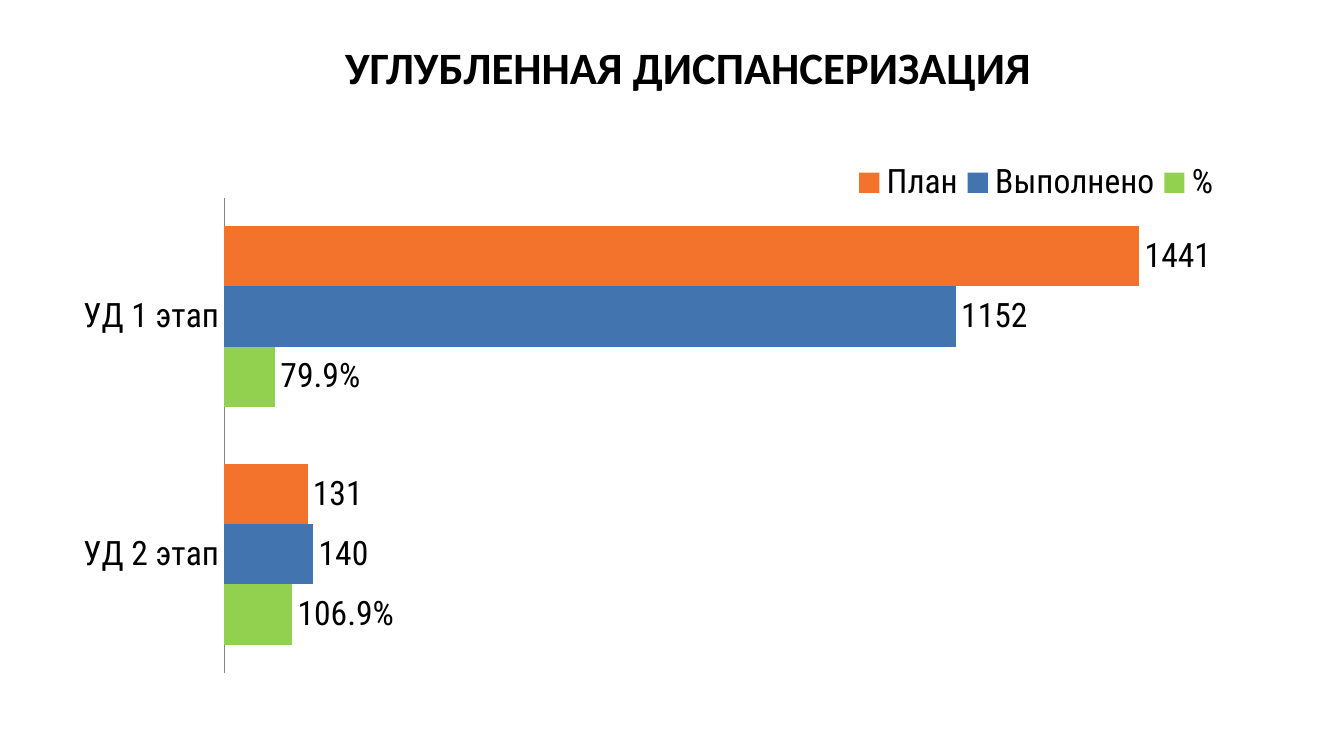
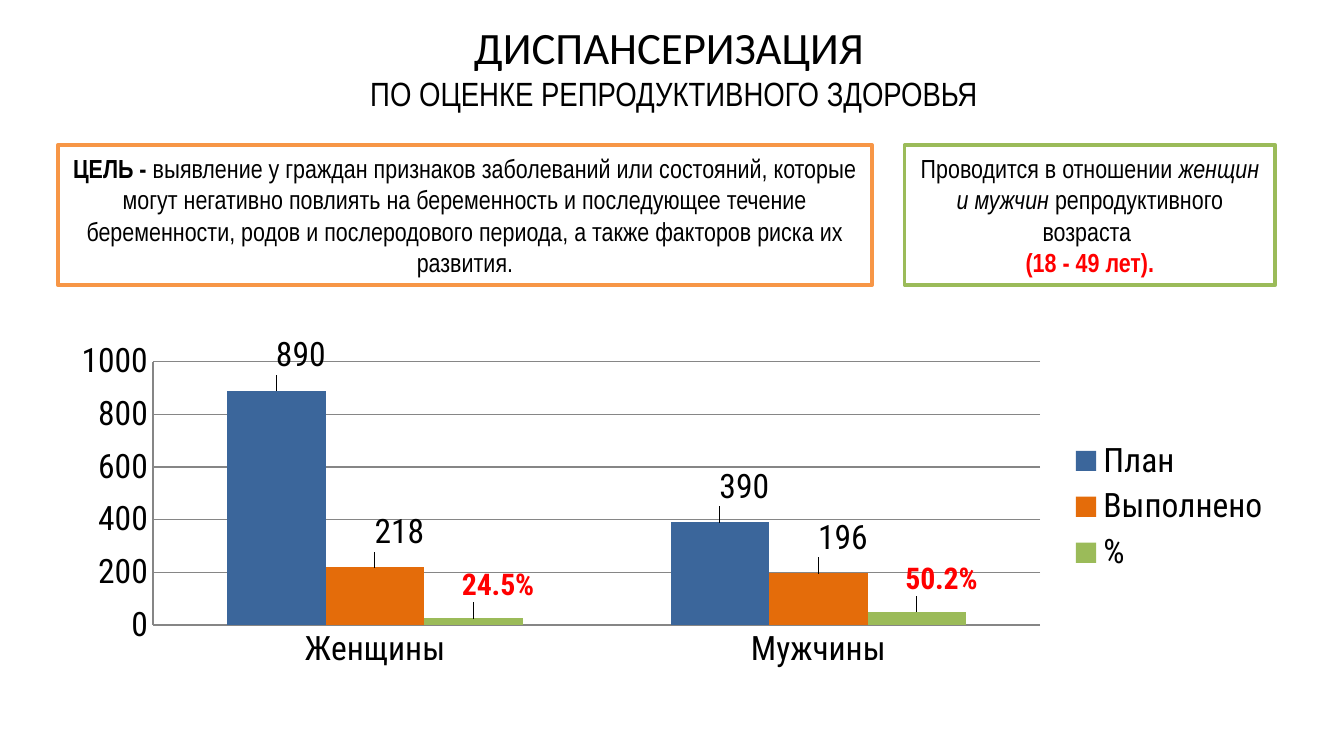
"""Builds two slides on health check-up results, each with a title and a chart."""
from lxml.etree import SubElement
from pptx import Presentation
from pptx.chart.data import CategoryChartData
from pptx.dml.color import RGBColor
from pptx.enum.chart import XL_CHART_TYPE as ChartType, XL_LEGEND_POSITION as LegendPlace
from pptx.enum.chart import XL_LABEL_POSITION as LabelPlace, XL_TICK_MARK as Tick
from pptx.enum.shapes import MSO_SHAPE as Shape
from pptx.enum.text import MSO_ANCHOR as Anchor, PP_ALIGN as Align
from pptx.oxml import parse_xml
from pptx.oxml.ns import nsdecls, qn
from pptx.util import Inches, Pt

WIDTH = 10
HEIGHT = WIDTH * 9 / 16
TITLE_TOP, TITLE_HEIGHT = 0.14, 0.71
BOX_TOP, BOX_HEIGHT = 1.08, 1.04
BLACK, WHITE, RED, GREY = "000000", "FFFFFF", "FF0000", "868686"
HEAD, BODY, CHART = "Calibri", "Arial Narrow", "Roboto Condensed"
PERCENT = '0.0"%"'
NO_LEADERS = (
    f'<c:extLst {nsdecls("c")}><c:ext uri="{{CE6537A1-D6FC-4f65-9D91-7224C49458BB}}" '
    'xmlns:c15="http://schemas.microsoft.com/office/drawing/2012/chart">'
    '<c15:showLeaderLines val="0"/></c:ext></c:extLst>')

STAGE_TITLE = [[("УГЛУБЛЕННАЯ ДИСПАНСЕРИЗАЦИЯ", {"bold": True})]]
HEALTH_TITLE = [[("ДИСПАНСЕРИЗАЦИЯ \n", {}),
                 ("ПО ОЦЕНКЕ РЕПРОДУКТИВНОГО ЗДОРОВЬЯ", {"size": 18, "font": BODY})]]
NOTES = [
    (6.73, 2.76, "9BBB59", [
        [("Проводится в отношении ", {}), ("женщин и мужчин", {"italic": True}),
         (" репродуктивного возраста ", {})],
        [("(18 - 49 лет).", {"bold": True, "color": RED})]]),
    (0.43, 6.06, "F79646", [
        [("ЦЕЛЬ - ", {"bold": True}),
         ("выявление у граждан признаков заболеваний или состояний, которые могут "
          "негативно повлиять на беременность и последующее течение беременности, родов "
          "и послеродового периода, а также факторов риска их развития.", {})]]),
]
STAGES = {
    "kind": ChartType.BAR_CLUSTERED, "frame": (0.44, 0.92, 8.97, 4.17), "gap": 95,
    "categories": ["УД 2 этап", "УД 1 этап"], "top": 1600,
    "plot": (1.23, 0.55, 7.56, 3.54), "legend": LegendPlace.TOP,
    "legend_area": (5.88, 0.29, 2.78, 0.3),
    "series": [("%", [106.9, 79.9], "92D050", {"number_format": PERCENT}),
               ("Выполнено", [140, 1152], "4274B0", {}),
               ("План", [131, 1441], "F4732C", {})],
}
GENDERS = {
    "kind": ChartType.COLUMN_CLUSTERED, "frame": (0.43, 2.5, 9.13, 2.54), "gap": 150,
    "categories": ["Женщины", "Мужчины"], "top": 1000, "step": 200,
    "plot": (0.71, 0.19, 6.6, 1.96), "legend": LegendPlace.RIGHT,
    "label_shift": (0.02, -0.03),
    "series": [("План", [890, 390], "3B669B", {}),
               ("Выполнено", [218, 196], "E46C0A", {}),
               ("%", [24.5, 50.2], "9BBB59", {"number_format": PERCENT, "size": 16,
                                               "color": RED, "bold": True})],
}


def rgb(color):
    return RGBColor.from_string(color)


def style(font, size=18, name=CHART, color=BLACK, bold=False, italic=False):
    font.size, font.name, font.bold, font.italic = Pt(size), name, bold, italic
    font.color.rgb = rgb(color)


def write(box, paragraphs, size=14, font=BODY, color=BLACK):
    frame = box.text_frame
    frame.word_wrap, frame.vertical_anchor = True, Anchor.MIDDLE
    for number, spans in enumerate(paragraphs):
        para = frame.paragraphs[0] if number == 0 else frame.add_paragraph()
        para.alignment = Align.CENTER
        for text, look in spans:
            span = para.add_run()
            span.text = text.rstrip("\n")
            style(span.font, look.get("size", size), look.get("font", font),
                  look.get("color", color), look.get("bold", False),
                  look.get("italic", False))
            if text.endswith("\n"):
                para.add_line_break()


def add_title(page, left, width, paragraphs):
    box = page.shapes.add_textbox(*map(Inches, (left, TITLE_TOP, width, TITLE_HEIGHT)))
    write(box, paragraphs, size=24, font=HEAD)


def add_note(page, left, width, color, paragraphs):
    box = page.shapes.add_shape(Shape.RECTANGLE,
                                *map(Inches, (left, BOX_TOP, width, BOX_HEIGHT)))
    box.shadow.inherit = False
    box.fill.solid()
    box.fill.fore_color.rgb = rgb(WHITE)
    box.line.color.rgb, box.line.width = rgb(color), Pt(2)
    write(box, paragraphs)


def layout(x, y, w=None, h=None, inner=False):
    root = parse_xml(f"<c:layout {nsdecls('c')}><c:manualLayout/></c:layout>")
    values = [("x", x), ("y", y)]
    if w:
        modes = [("xMode", "edge"), ("yMode", "edge")]
        values = modes + values + [("w", w), ("h", h)]
    if inner:
        values.insert(0, ("layoutTarget", "inner"))
    for tag, value in values:
        SubElement(root[0], qn(f"c:{tag}")).set("val", str(value))
    return root


def place(element, before, area, frame, inner=False):
    for old in element.findall(qn("c:layout")):
        element.remove(old)
    shares = [part / whole for part, whole in zip(area, frame[2:] * 2)]
    element.find(qn(f"c:{before}")).addprevious(layout(*shares, inner=inner))


def add_labels(series, shift, number_format="General", **look):
    labels = series.data_labels
    labels.show_value, labels.position = True, LabelPlace.OUTSIDE_END
    labels.number_format, labels.number_format_is_linked = number_format, False
    style(labels.font, **look)
    if not shift:
        return
    for index in range(len(series.values)):
        label = series.points[index].data_label
        label.position = LabelPlace.OUTSIDE_END
        style(label.font, **look)
    for item in labels._element.findall(qn("c:dLbl")):
        number = parse_xml(f"<c:numFmt {nsdecls('c')} sourceLinked='0'/>")
        number.set("formatCode", number_format)
        item.find(qn("c:idx")).addnext(number)
        number.addprevious(layout(*shift))
    labels._element.append(parse_xml(NO_LEADERS))


def add_chart(page, content):
    data = CategoryChartData()
    data.categories = content["categories"]
    for name, values, *_ in content["series"]:
        data.add_series(name, values)
    frame = content["frame"]
    chart = page.shapes.add_chart(content["kind"], *map(Inches, frame), data).chart
    chart.has_title = False
    style(chart.font)
    plot = chart.plots[0]
    plot.gap_width, plot.overlap, plot.vary_by_categories = content["gap"], 0, False
    for series, (_, _, color, look) in zip(plot.series, content["series"]):
        series.format.fill.solid()
        series.format.fill.fore_color.rgb = rgb(color)
        add_labels(series, content.get("label_shift"), **look)

    scale = chart.value_axis
    scale.minimum_scale, scale.maximum_scale = 0, content["top"]
    scale.visible = scale.has_major_gridlines = "step" in content
    lines = [chart.category_axis.format.line]
    if scale.visible:
        scale.major_unit = content["step"]
        lines += [scale.format.line, scale.major_gridlines.format.line]
    for line in lines:
        line.color.rgb, line.width = rgb(GREY), Pt(0.75)
    for axis in (chart.category_axis, scale):
        axis.major_tick_mark = axis.minor_tick_mark = Tick.NONE

    chart.has_legend = True
    legend = chart.legend
    legend.position, legend.include_in_layout = content["legend"], False
    style(legend.font)
    if "legend_area" in content:
        place(legend._element, "overlay", content["legend_area"], frame)
    area = chart._chartSpace.find(".//" + qn("c:plotArea"))
    place(area, "barChart", content["plot"], frame, inner=True)


def main():
    deck = Presentation()
    deck.slide_width, deck.slide_height = Inches(WIDTH), Inches(HEIGHT)
    blank = deck.slide_layouts[6]

    stages = deck.slides.add_slide(blank)
    add_title(stages, 2.01, 6.22, STAGE_TITLE)
    add_chart(stages, STAGES)

    health = deck.slides.add_slide(blank)
    add_title(health, 0.33, 9.37, HEALTH_TITLE)
    for note in NOTES:
        add_note(health, *note)
    add_chart(health, GENDERS)
    deck.save("out.pptx")


if __name__ == "__main__":
    main()
